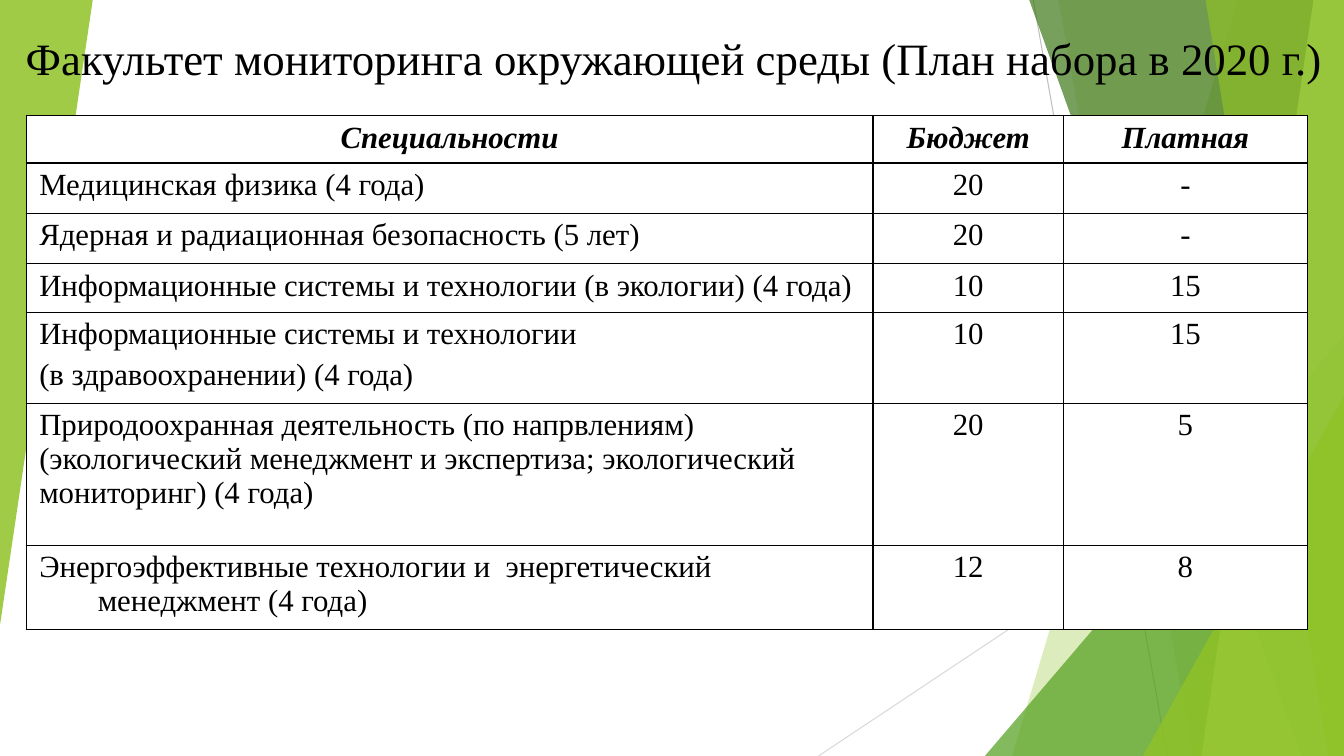
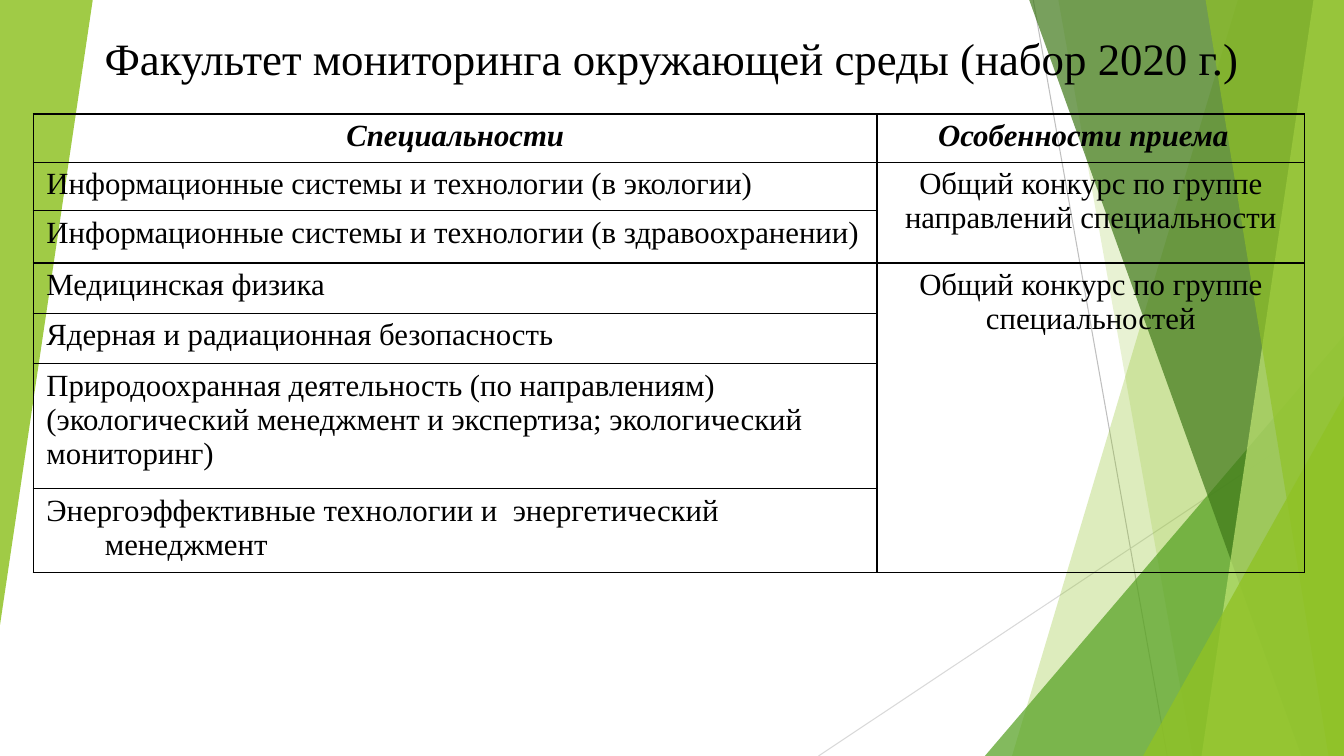
from dataclasses import dataclass

from lxml import etree
from pptx import Presentation
from pptx.dml.color import RGBColor
from pptx.enum.shapes import MSO_CONNECTOR, MSO_SHAPE
from pptx.enum.text import MSO_ANCHOR, PP_ALIGN
from pptx.oxml.ns import qn
from pptx.util import Inches, Pt

TRIANGLE = MSO_SHAPE.ISOSCELES_TRIANGLE
STRAIGHT = MSO_CONNECTOR.STRAIGHT
BOTTOM = MSO_ANCHOR.BOTTOM
LEFT, CENTER, RIGHT = PP_ALIGN.LEFT, PP_ALIGN.CENTER, PP_ALIGN.RIGHT


@dataclass(frozen=True)
class Theme:
    """Colours, font and sizes shared by the slides."""
    font: str = "Times New Roman"
    title_size: int = 32
    cell_size: int = 22
    border_width: int = 1
    ink: str = "000000"
    paper: str = "FFFFFF"
    lime: str = "90C226"
    pale: str = "C0E474"
    leaf: str = "54A021"
    forest: str = "3F7819"
    gray: str = "BFBFBF"
    mist: str = "D9D9D9"


THEME = Theme()


@dataclass(frozen=True)
class Box:
    """An area whose contents are placed by percent of its size."""
    left: int
    top: int
    width: int
    height: int

    def point(self, across, down):
        """Return the position at the given percents."""
        return (self.left + round(self.width * across / 100),
                self.top + round(self.height * down / 100))

    def inner(self, across, down, width, height):
        """Return the inner box at the given percents."""
        return Box(*self.point(across, down),
                   round(self.width * width / 100), round(self.height * height / 100))

    def bounds(self):
        """Return left, top, width and height."""
        return self.left, self.top, self.width, self.height


@dataclass(frozen=True)
class Cell:
    """Text of a table cell, one paragraph for each line, and its layout."""
    lines: tuple
    hanging: float = 0
    right_margin: float = 0.13


def paint(shape, color, opacity):
    """Give a shape a translucent fill, no outline and no shadow."""
    shape.shadow.inherit = False
    shape.line.fill.background()
    shape.fill.solid()
    shape.fill.fore_color.rgb = RGBColor.from_string(color)
    tint = shape.element.spPr.find(f".//{qn('a:srgbClr')}")
    etree.SubElement(tint, qn("a:alpha"), val=str(opacity * 1000))


def draw_line(slide, start, end, color):
    """Draw a thin straight line."""
    line = slide.shapes.add_connector(STRAIGHT, *start, *end)
    line.line.color.rgb = RGBColor.from_string(color)
    line.line.width = Pt(0.75)
    etree.SubElement(line.element.spPr, qn("a:effectLst"))


def draw_band(slide, box, top, bottom, color, opacity):
    """Draw a band from a slanted left edge to the right side of the box."""
    outline = slide.shapes.build_freeform(*box.point(top, 0))
    corners = [box.point(100, 0), box.point(100, 100), box.point(bottom, 100)]
    outline.add_line_segments(corners, close=True)
    paint(outline.convert_to_shape(), color, opacity)


def draw_corner(slide, box, color, opacity, rotation=0):
    """Draw a right triangle that fills the box."""
    corner = slide.shapes.add_shape(TRIANGLE, *box.bounds())
    corner.adjustments[0] = 1
    corner.rotation = rotation
    paint(corner, color, opacity)


def draw_facets(slide, box):
    """Draw the green facets behind the content."""
    draw_line(slide, box.point(76.88, 0), box.point(86.85, 100), THEME.gray)
    draw_line(slide, box.point(100, 53.73), box.point(60.9, 100), THEME.mist)
    draw_band(slide, box, 92.1, 75.3, THEME.lime, 30)
    draw_band(slide, box, 78.75, 88.73, THEME.lime, 20)
    draw_corner(slide, box.inner(73.28, 44.4, 26.72, 55.6), THEME.leaf, 72)
    draw_band(slide, box, 76.58, 96.83, THEME.forest, 70)
    draw_band(slide, box, 97.73, 89.4, THEME.pale, 70)
    draw_band(slide, box, 89.7, 98.85, THEME.lime, 65)
    draw_corner(slide, box.inner(85.05, 52.4, 14.95, 47.6), THEME.lime, 80)
    draw_corner(slide, box.inner(0, 0, 6.9, 82.67), THEME.lime, 85, 180)


def add_span(para, text, size, strong=False):
    """Add one run in the theme font."""
    span = para.add_run()
    span.text = text
    span.font.name = THEME.font
    span.font.size = Pt(size)
    span.font.bold = span.font.italic = strong
    span.font.color.rgb = RGBColor.from_string(THEME.ink)


def draw_title(slide, box, text, align):
    """Place the slide title at the foot of its box."""
    frame = slide.shapes.add_textbox(*box.bounds()).text_frame
    frame.word_wrap = True
    frame.vertical_anchor = BOTTOM
    para = frame.paragraphs[0]
    para.alignment = align
    add_span(para, text, THEME.title_size)


def add_borders(cell):
    """Outline a cell on all four sides."""
    properties = cell._tc.get_or_add_tcPr()
    for place, side in enumerate(("lnL", "lnR", "lnT", "lnB")):
        border = etree.Element(qn(f"a:{side}"), w=str(Pt(THEME.border_width)))
        fill = etree.SubElement(border, qn("a:solidFill"))
        etree.SubElement(fill, qn("a:srgbClr"), val=THEME.ink)
        properties.insert(place, border)


def write_cell(cell, content, align, strong):
    """Write the paragraphs of a cell."""
    if isinstance(content, str):
        content = Cell((content,))
    cell.margin_left, cell.margin_right = Inches(0.13), Inches(content.right_margin)
    cell.margin_top = cell.margin_bottom = Inches(0.05)
    frame = cell.text_frame
    for number, line in enumerate(content.lines):
        para = frame.add_paragraph() if number else frame.paragraphs[0]
        para.alignment = align
        if number:
            para.space_before = Pt(5)
        if content.hanging:
            indent = Inches(content.hanging)
            layout = para._p.get_or_add_pPr()
            layout.set("marL", str(indent))
            layout.set("indent", str(-indent))
        add_span(para, line, THEME.cell_size, strong)


def draw_table(slide, box, widths, heights, rows, fill=None):
    """Draw a table with a header; None joins a cell to the one above."""
    table = slide.shapes.add_table(len(rows), len(widths), *box.bounds()).table
    table.first_row = table.horz_banding = False
    for column, width in zip(table.columns, widths):
        column.width = round(box.width * width / sum(widths))
    for line, height in zip(table.rows, heights):
        line.height = round(box.height * height / sum(heights))
    for row, contents in enumerate(rows):
        for column, content in enumerate(contents):
            cell = table.cell(row, column)
            if fill:
                cell.fill.solid()
                cell.fill.fore_color.rgb = RGBColor.from_string(fill)
            else:
                cell.fill.background()
            add_borders(cell)
            if content is not None:
                align = CENTER if row == 0 or column else LEFT
                write_cell(cell, content, align, row == 0)
    for column in range(len(widths)):
        starts = [row for row, contents in enumerate(rows) if contents[column] is not None]
        for start, following in zip(starts, starts[1:] + [len(rows)]):
            if following - start > 1:
                table.cell(start, column).merge(table.cell(following - 1, column))


def start_slide(deck, title, align):
    """Add a slide with facets and title, and return it with its page box."""
    slide = deck.slides.add_slide(deck.slide_layouts[6])
    page = Box(0, 0, deck.slide_width, deck.slide_height)
    draw_facets(slide, page)
    draw_title(slide, page.inner(0, 2.8, 100, 9.07), title, align)
    return slide, page


def add_plan_slide(deck):
    """Add the slide with the number of places."""
    slide, page = start_slide(
        deck, "Факультет мониторинга окружающей среды (План набора в 2020 г.) ", RIGHT)
    rows = [
        ("Специальности", "Бюджет", "Платная"),
        ("Медицинская физика (4 года)", "20", "-"),
        ("Ядерная и радиационная безопасность (5 лет)", "20", "-"),
        ("Информационные системы и технологии (в экологии) (4 года)", "10", "15"),
        (Cell(("Информационные системы и технологии",
               "(в здравоохранении) (4 года)")), "10", "15"),
        ("Природоохранная деятельность (по напрвлениям) (экологический менеджмент "
         "и экспертиза; экологический мониторинг) (4 года)", "20", "5"),
        (Cell(("Энергоэффективные технологии и  энергетический менеджмент (4 года)",),
              hanging=0.58), "12", "8"),
    ]
    draw_table(slide, page.inner(1.95, 15.33, 95.33, 66.4), (8.4, 1.89, 2.42),
               (0.43, 0.5, 0.5, 0.48, 0.83, 1.41, 0.83), rows, THEME.paper)


def add_admission_slide(deck):
    """Add the slide with the rules of admission."""
    slide, page = start_slide(
        deck, "Факультет мониторинга окружающей среды (набор 2020 г.)", CENTER)
    rows = [
        ("Специальности", Cell(("Особенности приема",), right_margin=0.28)),
        ("Информационные системы и технологии (в экологии)",
         "Общий конкурс по группе направлений специальности"),
        ("Информационные системы и технологии (в здравоохранении)", None),
        ("Медицинская физика", "Общий конкурс по группе специальностей"),
        ("Ядерная и радиационная безопасность", None),
        ("Природоохранная деятельность (по направлениям) (экологический менеджмент "
         "и экспертиза; экологический мониторинг)", None),
        (Cell(("Энергоэффективные технологии и  энергетический менеджмент",),
              hanging=0.58), None),
    ]
    draw_table(slide, page.inner(2.48, 15.07, 94.58, 60.13), (8.37, 4.24),
               (0.48, 0.48, 0.52, 0.5, 0.5, 1.24, 0.79), rows)


def main():
    """Build and save the deck."""
    deck = Presentation()
    deck.slide_width, deck.slide_height = Inches(13.33), Inches(7.5)
    add_plan_slide(deck)
    add_admission_slide(deck)
    deck.save("out.pptx")


if __name__ == "__main__":
    main()
